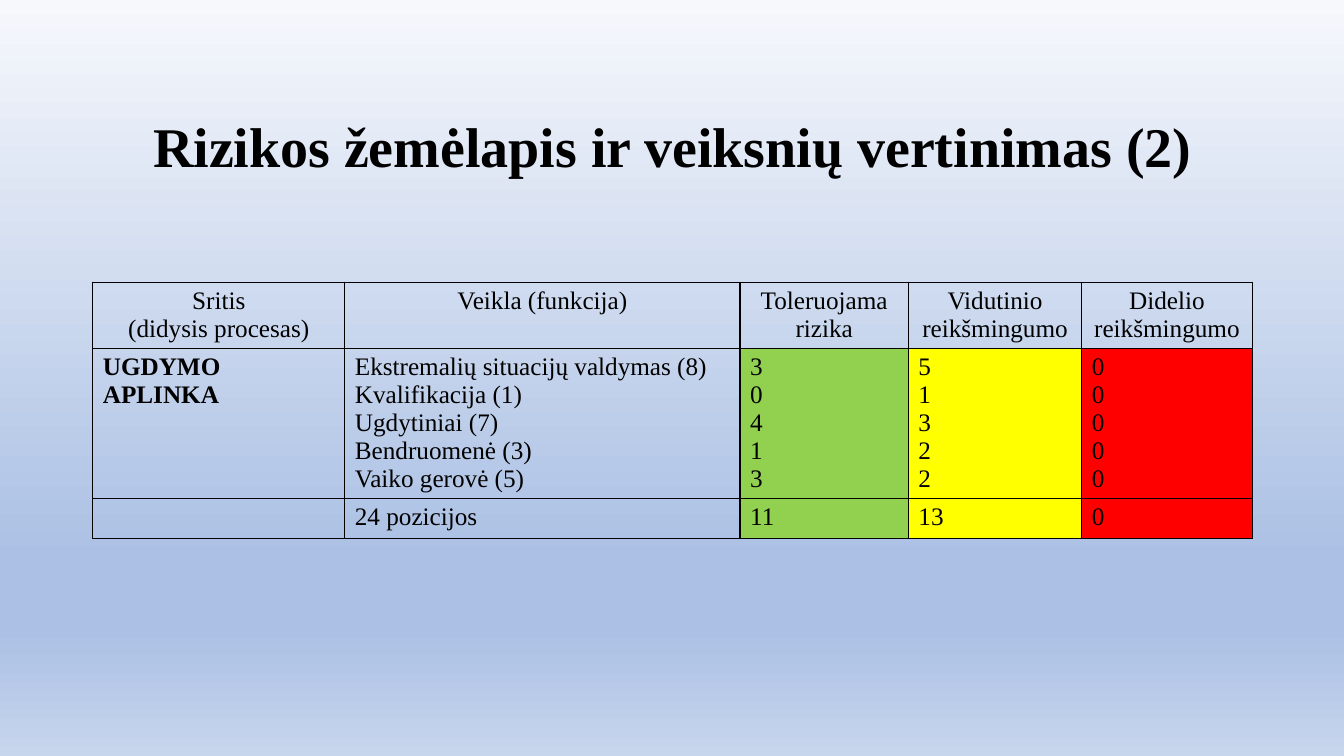
from copy import deepcopy
from dataclasses import dataclass

from lxml.etree import SubElement
from pptx import Presentation
from pptx.dml.color import RGBColor
from pptx.enum.text import MSO_ANCHOR, MSO_AUTO_SIZE, PP_ALIGN
from pptx.oxml.ns import qn
from pptx.util import Inches, Pt


@dataclass(frozen=True)
class Theme:
    """Colours and type sizes of the slide."""
    font: str = "Times New Roman"
    ink: str = "000000"
    title_size: int = 40
    table_size: int = 18
    border_width: int = 1
    tolerable: str = "92D050"
    medium: str = "FFFF00"
    high: str = "FF0000"
    sky: tuple = ((0, "F6F8FC"), (0.74, "ABC0E4"), (0.83, "ABC0E4"), (1, "C7D5ED"))


THEME = Theme()
TITLE = "Rizikos žemėlapis ir veiksnių vertinimas (2)"
COLUMN_WIDTHS = (2.5, 3.92, 1.67, 1.72, 1.69)
ROW_HEIGHTS = (0.65, 1.49, 0.4)
RISK_FILLS = (None, None, THEME.tolerable, THEME.medium, THEME.high)
RISK_MAP = (
    ("Sritis\n(didysis procesas)", "Veikla (funkcija)", "Toleruojama rizika",
     "Vidutinio reikšmingumo", "Didelio reikšmingumo"),
    ("UGDYMO APLINKA",
     "Ekstremalių situacijų valdymas (8)\nKvalifikacija (1)\nUgdytiniai (7)\n"
     "Bendruomenė (3)\nVaiko gerovė (5)",
     "3\n0\n4\n1\n3", "5\n1\n3\n2\n2", "0\n0\n0\n0\n0"),
    ("", "24 pozicijos", "11", "13", "0"),
)


def apply_format(target, values):
    """Set every attribute named in values on target."""
    for name, value in values.items():
        setattr(target, name, value)


def write_text(frame, text, size, bold, align, spacing=1.0):
    """Fill a text frame with one formatted paragraph per line."""
    frame.text = text
    for paragraph in frame.paragraphs:
        apply_format(paragraph, {"alignment": align, "line_spacing": spacing})
        apply_format(paragraph.font, {"name": THEME.font, "size": Pt(size), "bold": bold})
        for run in paragraph.runs:
            apply_format(run.font, {"name": THEME.font, "size": Pt(size), "bold": bold})
            run.font.color.rgb = RGBColor.from_string(THEME.ink)


def paint_background(slide):
    """Paint the vertical gradient behind the slide."""
    fill = slide.background.fill
    fill.gradient()
    fill.gradient_angle = 270
    stop_list = slide.element.find(f".//{qn('a:gsLst')}")
    for _ in THEME.sky[len(stop_list):]:
        stop_list.append(deepcopy(stop_list[0]))
    for stop, (position, color) in zip(fill.gradient_stops, THEME.sky):
        stop.color.rgb = RGBColor.from_string(color)
        stop.position = position


def add_title(slide):
    """Place and format the title placeholder."""
    title = slide.shapes.title
    apply_format(title, {"left": Inches(0.92), "top": Inches(0.76),
                         "width": Inches(11.5), "height": Inches(1.45)})
    apply_format(title.text_frame, {"word_wrap": True, "auto_size": MSO_AUTO_SIZE.NONE,
                                    "vertical_anchor": MSO_ANCHOR.MIDDLE})
    write_text(title.text_frame, TITLE, THEME.title_size, True, PP_ALIGN.CENTER, 0.9)


def draw_borders(cell):
    """Draw a solid line on all four sides of a cell."""
    properties = cell._tc.get_or_add_tcPr()
    for index, side in enumerate(("a:lnL", "a:lnR", "a:lnT", "a:lnB")):
        line = SubElement(properties, qn(side), w=str(Pt(THEME.border_width)))
        solid = SubElement(line, qn("a:solidFill"))
        SubElement(solid, qn("a:srgbClr"), val=THEME.ink)
        properties.insert(index, line)


def fill_cell(cell, color):
    """Fill a cell with a colour, or leave it clear."""
    if color:
        cell.fill.solid()
        cell.fill.fore_color.rgb = RGBColor.from_string(color)
    else:
        cell.fill.background()


def add_risk_table(slide):
    """Add the risk map with its coloured significance columns."""
    table = slide.shapes.add_table(
        len(RISK_MAP), len(COLUMN_WIDTHS), Inches(0.92), Inches(2.8),
        Inches(sum(COLUMN_WIDTHS)), Inches(sum(ROW_HEIGHTS))).table
    apply_format(table, {"first_row": False, "horz_banding": False})
    for column, width in zip(table.columns, COLUMN_WIDTHS):
        column.width = Inches(width)
    for row_index, (row, height, texts) in enumerate(zip(table.rows, ROW_HEIGHTS, RISK_MAP)):
        row.height = Inches(height)
        is_header = row_index == 0
        align = PP_ALIGN.CENTER if is_header else PP_ALIGN.LEFT
        for column_index, (cell, text) in enumerate(zip(row.cells, texts)):
            is_area = column_index == 0 and not is_header
            write_text(cell.text_frame, text, THEME.table_size, is_area, align)
            fill_cell(cell, None if is_header else RISK_FILLS[column_index])
            draw_borders(cell)


def main():
    """Build and save the risk map slide."""
    presentation = Presentation()
    apply_format(presentation, {"slide_width": Inches(13.33), "slide_height": Inches(7.5)})
    slide = presentation.slides.add_slide(presentation.slide_layouts.get_by_name("Title Only"))
    paint_background(slide)
    add_title(slide)
    add_risk_table(slide)
    presentation.save("out.pptx")


if __name__ == "__main__":
    main()
